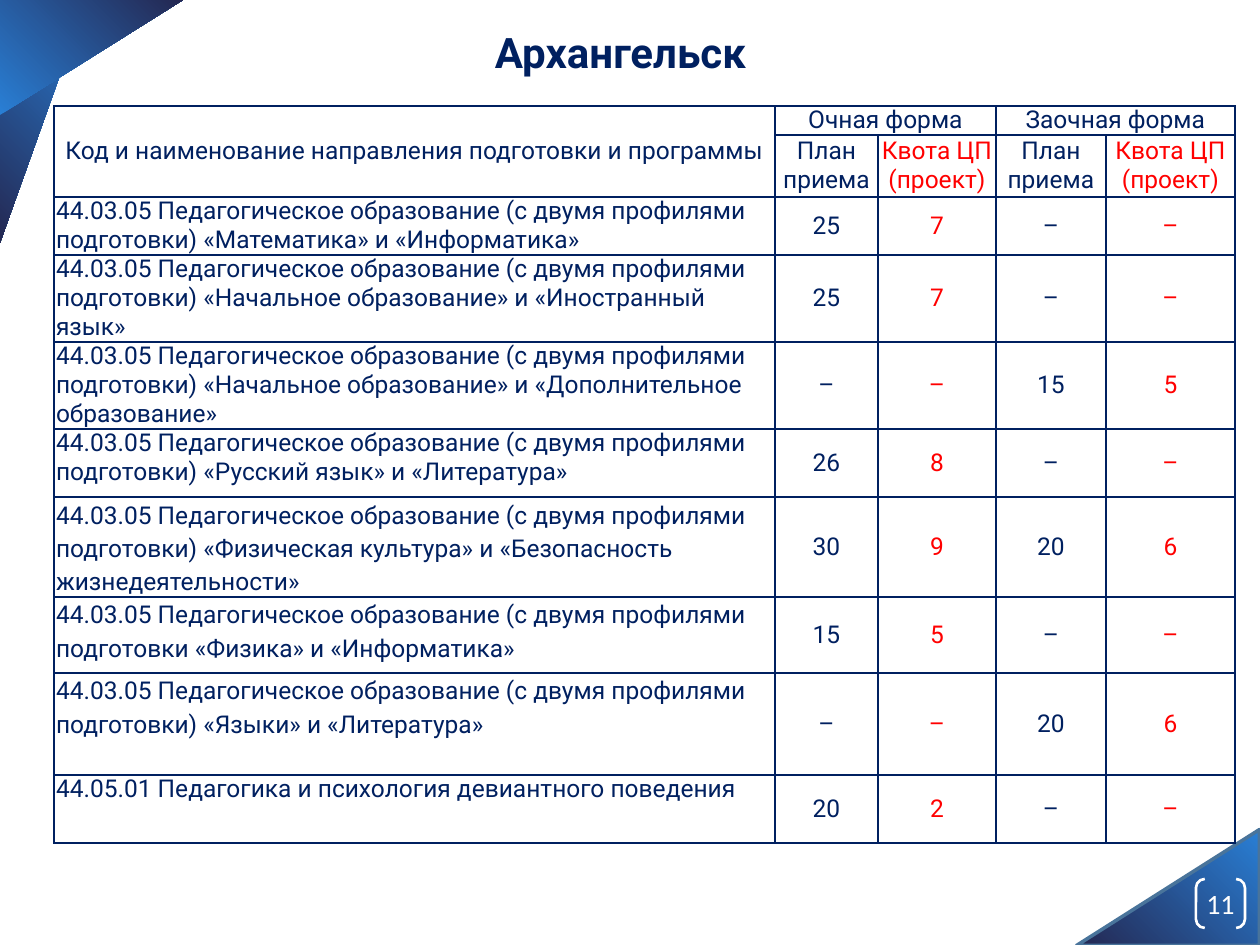
from lxml import etree
from pptx import Presentation
from pptx.dml.color import RGBColor
from pptx.enum.shapes import MSO_SHAPE as Shape
from pptx.enum.text import MSO_ANCHOR as Anchor, PP_ALIGN as Align
from pptx.oxml import parse_xml
from pptx.util import Emu, Pt

NAVY, RED, WHITE = "002060", "FF0000", "FFFFFF"
BLUE, DARK, EDGE = "297FD5", "242852", "49749B"
DRAWING = "http://schemas.openxmlformats.org/drawingml/2006/main"


def px(value):
    return Emu(round(value * 914400 / 126))


def style(para, size, font, color, align=Align.CENTER, bold=False):
    para.alignment = align
    for span in para.runs:
        span.font.size = Pt(size)
        span.font.name = font
        span.font.bold = bold
        span.font.color.rgb = RGBColor.from_string(color)


deck = Presentation()
deck.slide_width, deck.slide_height = px(1260), px(945)
page = deck.slides.add_slide(deck.slide_layouts[5])

title = page.shapes.title
title.left, title.top, title.width, title.height = px(30), px(20), px(1181), px(63)
title.text_frame.text = "Архангельск"
style(title.text_frame.paragraphs[0], 24, "Roboto", NAVY, bold=True)

corners = [
    (1110, 796, 116, 183, 270, False, True),
    (0, 0, 87, 243, 180, True, False),
    (34, -34, 115, 183, 90, False, False),
]
for left, top, width, height, rotation, flipped, outlined in corners:
    corner = page.shapes.add_shape(
        Shape.RIGHT_TRIANGLE, px(left), px(top), px(width), px(height))
    corner.shadow.inherit = False
    corner.rotation = rotation
    if flipped:
        corner.element.spPr.xfrm.set("flipH", "1")
    corner.fill.gradient()
    corner.fill.gradient_angle = 135
    for stop, color in zip(corner.fill.gradient_stops, (BLUE, DARK)):
        stop.color.rgb = RGBColor.from_string(color)
    if outlined:
        corner.line.color.rgb = RGBColor.from_string(EDGE)
        corner.line.width = Pt(2)
    else:
        corner.line.fill.background()

number = page.shapes.add_shape(Shape.DOUBLE_BRACKET, px(1196), px(879), px(49), px(49))
number.shadow.inherit = False
number.adjustments[0] = 0.18
number.fill.background()
number.line.color.rgb = RGBColor.from_string(WHITE)
number.line.width = Pt(1.5)
frame = number.text_frame
frame.margin_left = frame.margin_right = frame.margin_top = frame.margin_bottom = 0
frame.vertical_anchor = Anchor.MIDDLE
frame.text = "11"
style(frame.paragraphs[0], 16, "Calibri", WHITE)

PLAN, QUOTA = "План приема", "Квота ЦП\v(проект)"
PROFILES = "44.03.05 Педагогическое образование (с двумя профилями подготовки"
rows = [
    ("Код и наименование направления подготовки и программы",
     "Очная форма", "", "Заочная форма", ""),
    ("", PLAN, QUOTA, PLAN, QUOTA),
    (f"{PROFILES}) «Математика» и «Информатика»", "25", "7", "–", "–"),
    (f"{PROFILES}) «Начальное образование» и «Иностранный язык»", "25", "7", "–", "–"),
    (f"{PROFILES}) «Начальное образование» и «Дополнительное образование»",
     "–", "–", "15", "5"),
    (f"{PROFILES}) «Русский язык» и «Литература»", "26", "8", "–", "–"),
    (f"{PROFILES}) «Физическая культура» и «Безопасность жизнедеятельности»",
     "30", "9", "20", "6"),
    (f"{PROFILES} «Физика» и «Информатика»", "15", "5", "–", "–"),
    (f"{PROFILES}) «Языки» и «Литература»", "–", "–", "20", "6"),
    ("44.05.01 Педагогика и психология девиантного поведения", "20", "2", "–", "–"),
]
widths = [721, 103, 118, 110, 129]
heights = [29, 62, 58, 87, 87, 68, 100, 76, 102, 68]
SPACED_ROWS = (6, 7, 8)

table = page.shapes.add_table(
    len(rows), len(widths), px(54), px(106), px(sum(widths)), px(sum(heights))).table
table.first_row = table.horz_banding = False
for column, width in zip(table.columns, widths):
    column.width = px(width)
for row, height in zip(table.rows, heights):
    row.height = px(height)

for r, values in enumerate(rows):
    for c, value in enumerate(values):
        cell = table.cell(r, c)
        cell.margin_left = cell.margin_right = px(2)
        cell.margin_top = cell.margin_bottom = 0
        cell.fill.background()
        properties = cell._tc.get_or_add_tcPr()
        for place, side in enumerate(("lnL", "lnR", "lnT", "lnB")):
            properties.insert(place, parse_xml(
                f'<a:{side} xmlns:a="{DRAWING}" w="12700"><a:solidFill>'
                f'<a:srgbClr val="{NAVY}"/></a:solidFill></a:{side}>'))
        is_program = c == 0 and r > 1
        cell.vertical_anchor = Anchor.TOP if is_program else Anchor.MIDDLE
        cell.text_frame.text = value
        para = cell.text_frame.paragraphs[0]
        if is_program and r in SPACED_ROWS:
            para.line_spacing = 1.15
        style(para, 14, "Roboto", RED if r and c in (2, 4) else NAVY,
              Align.LEFT if is_program else Align.CENTER)

table.cell(0, 0).merge(table.cell(1, 0))
table.cell(0, 1).merge(table.cell(0, 2))
table.cell(0, 3).merge(table.cell(0, 4))

deck.save("out.pptx")
